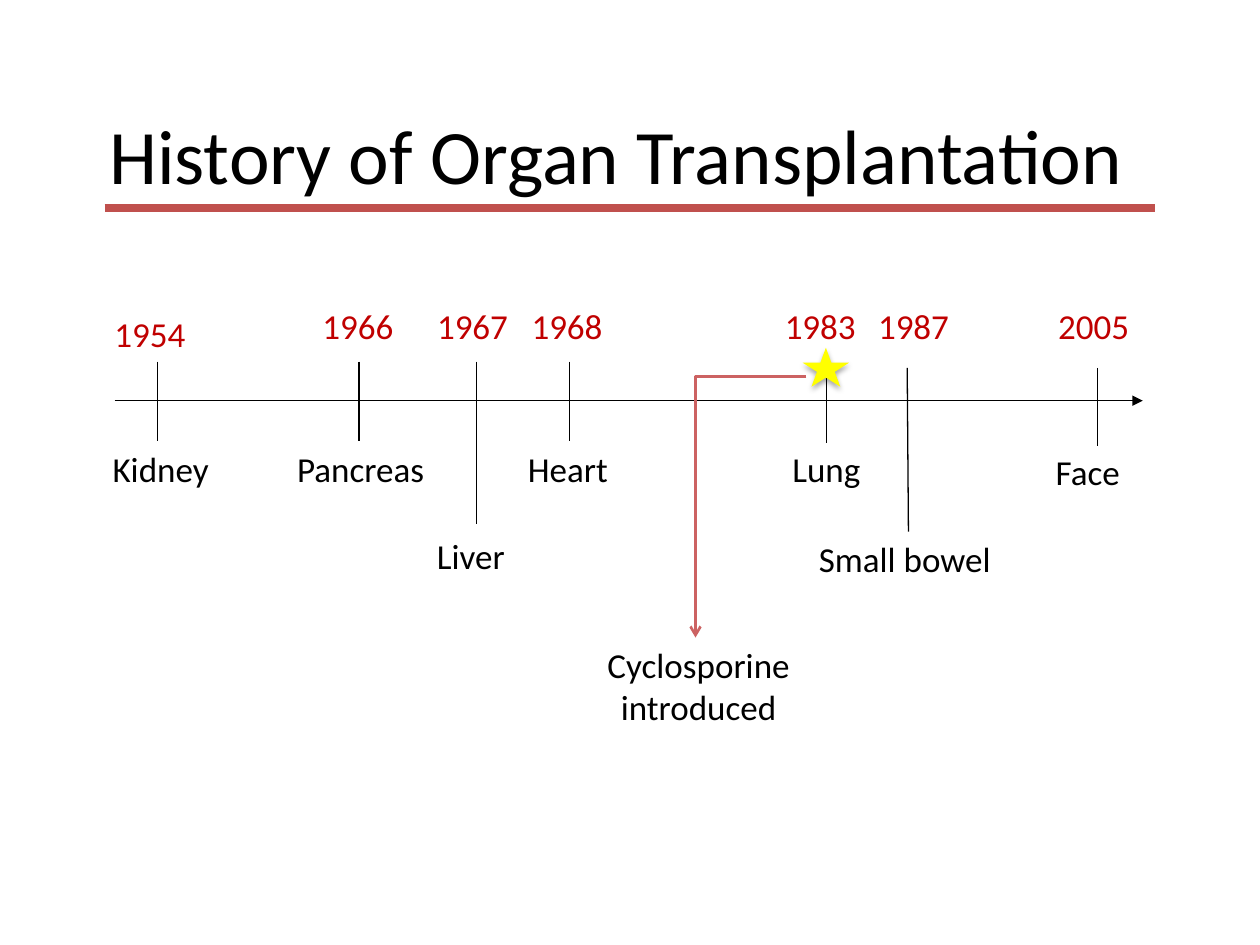
from lxml.etree import SubElement
from pptx import Presentation
from pptx.dml.color import RGBColor
from pptx.enum.shapes import MSO_CONNECTOR, MSO_SHAPE
from pptx.enum.text import MSO_ANCHOR, PP_ALIGN
from pptx.oxml.ns import qn
from pptx.util import Emu, Pt

EMU_PER_PX = 9144  # 100 px to the inch
BLACK = RGBColor(0x00, 0x00, 0x00)
RED = RGBColor(0xC0, 0x00, 0x00)
RULE_RED = RGBColor(0xC0, 0x50, 0x4D)
ARROW_RED = RGBColor(0xCC, 0x62, 0x62)
YELLOW = RGBColor(0xFF, 0xFF, 0x00)

# year, (left, top, width); organ, (left, top, width); tick (x, top, x, bottom)
EVENTS = [
    ("1954", (9, 6, 87), "Kidney", (0, 113, 111), (53, 50, 53, 113)),
    ("1966", (174, 0, 91), "Pancreas", (154, 113, 143), (213, 50, 213, 113)),
    ("1967", (265, 0, 82), "Liver", (265, 182, 84), (306, 50, 306, 179)),
    ("1968", (340, 0, 91), "Heart", (337, 113, 88), (380, 50, 380, 113)),
    ("1983", (541, 0, 81), "Lung", (547, 113, 85), (584, 52, 584, 115)),
    ("1987", (615, 0, 89), "Small bowel", (568, 185, 178), (648, 55, 649, 185)),
    ("2005", (758, 0, 88), "Face", (756, 116, 85), (799, 55, 799, 117)),
]


def px(length):
    return Emu(length * EMU_PER_PX)


def add_text(slide, text, left, top, width, height=44, size=20, color=BLACK,
             align=PP_ALIGN.LEFT):
    shape = slide.shapes.add_textbox(px(left), px(top), px(width), px(height))
    frame = shape.text_frame
    frame.word_wrap = True
    paragraph = frame.paragraphs[0]
    paragraph.text = text
    paragraph.alignment = align
    paragraph.font.name = "Calibri"
    paragraph.font.size = Pt(size)
    paragraph.font.color.rgb = color
    return shape


def add_line(slide, start_x, start_y, end_x, end_y, color=BLACK, weight=0.75,
             arrowhead=None, kind=MSO_CONNECTOR.STRAIGHT):
    connector = slide.shapes.add_connector(
        kind, px(start_x), px(start_y), px(end_x), px(end_y))
    connector.line.color.rgb = color
    connector.line.width = Pt(weight)
    if arrowhead:
        SubElement(connector.line._get_or_add_ln(), qn("a:tailEnd"), type=arrowhead)
    SubElement(connector._element.spPr, qn("a:effectLst"))
    return connector


def add_title(slide, left, top):
    title = add_text(slide, "History of Organ Transplantation", left, top, 898, 86,
                     size=44, align=PP_ALIGN.CENTER)
    frame = title.text_frame
    frame.vertical_anchor = MSO_ANCHOR.MIDDLE
    frame.margin_top = frame.margin_bottom = px(10)
    add_line(slide, left + 43, top + 86, left + 877, top + 86, RULE_RED, 4.5)


def add_timeline(slide, left, top):
    # Axis
    add_line(slide, left + 19, top + 81, left + 835, top + 81, arrowhead="triangle")
    # Years, ticks and organs
    for year, year_box, organ, organ_box, tick in EVENTS:
        start_x, start_y, end_x, end_y = tick
        add_line(slide, left + start_x, top + start_y, left + end_x, top + end_y)
        for text, box, color in ((year, year_box, RED), (organ, organ_box, BLACK)):
            text_left, text_top, width = box
            align = PP_ALIGN.CENTER if text == "Kidney" else PP_ALIGN.LEFT
            add_text(slide, text, left + text_left, top + text_top, width,
                     color=color, align=align)


def add_cyclosporine(slide, left, top):
    # Star with a soft shadow
    star = slide.shapes.add_shape(
        MSO_SHAPE.STAR_5_POINT, px(left + 179), px(top), px(37), px(31))
    star.fill.solid()
    star.fill.fore_color.rgb = YELLOW
    star.line.fill.background()
    effects = SubElement(star._element.spPr, qn("a:effectLst"))
    shadow = SubElement(effects, qn("a:outerShdw"), blurRad=str(Pt(3.1)),
                        dist=str(Pt(1.8)), dir="5400000", rotWithShape="0")
    shadow_color = SubElement(shadow, qn("a:srgbClr"), val=str(BLACK))
    SubElement(shadow_color, qn("a:alpha"), val="35000")
    # Arrow with a single bend, left and then down
    arrow = add_line(slide, left + 182, top + 23, left + 94, top + 230, ARROW_RED, 1.5,
                     "arrow", MSO_CONNECTOR.ELBOW)
    arrow._element.spPr.find(qn("a:prstGeom")).set("prst", "bentConnector2")
    add_text(slide, "Cyclosporine introduced", left, top + 230, 193, 77,
             align=PP_ALIGN.CENTER)


def main():
    presentation = Presentation()
    presentation.slide_width = px(1000)
    presentation.slide_height = px(750)
    slide = presentation.slides.add_slide(presentation.slide_layouts[6])
    add_timeline(slide, 72, 237)
    add_cyclosporine(slide, 458, 276)
    add_title(slide, 40, 79)
    presentation.save("out.pptx")


if __name__ == "__main__":
    main()
